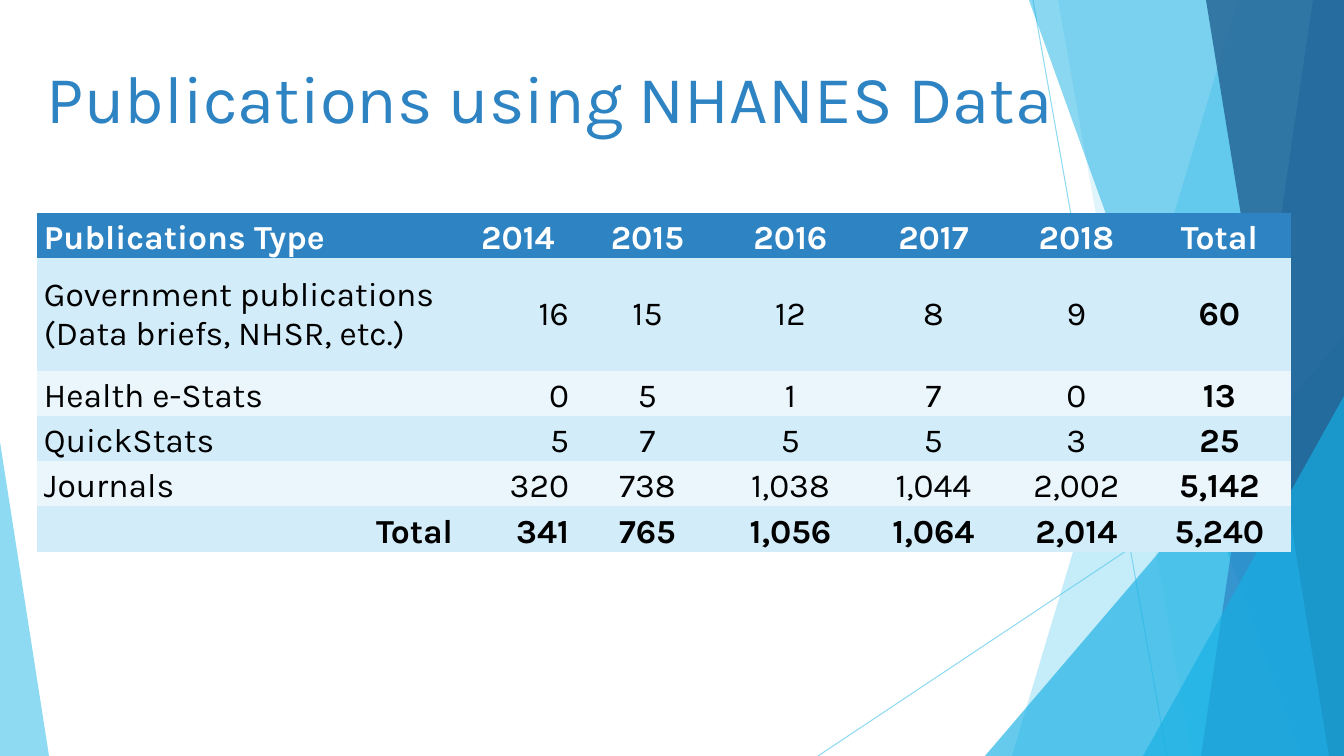
from lxml.etree import SubElement
from pptx import Presentation
from pptx.dml.color import RGBColor
from pptx.enum.shapes import MSO_CONNECTOR, MSO_SHAPE
from pptx.enum.text import MSO_ANCHOR as Anchor, PP_ALIGN as Align
from pptx.oxml.ns import qn
from pptx.util import Emu, Pt

WIDTH, HEIGHT = 1344, 756
FONT = "Karla"
SKY, CYAN, BLUE, NAVY = "5FCBEF", "17B0E4", "2E83C3", "226292"
WHITE, BLACK = "FFFFFF", "000000"
BANDS = ["D2ECF9", "EAF6FC"]
NO_GRID_STYLE = "{2D5ABB26-0587-4C30-8999-92F81FD0307C}"

COLUMN_WIDTHS = [423, 116] + [143] * 5
ROW_HEIGHTS = [45, 113, 45, 45, 45, 46]
PUBLICATIONS = [
    ["Publications Type", "2014", "2015", "2016", "2017", "2018", "Total"],
    ["Government publications (Data briefs, NHSR, etc.)", "16", "15", "12", "8", "9", "60"],
    ["Health e-Stats", "0", "5", "1", "7", "0", "13"],
    ["QuickStats", "5", "7", "5", "5", "3", "25"],
    ["Journals", "320", "738", "1,038", "1,044", "2,002", "5,142"],
    ["Total", "341", "765", "1,056", "1,064", "2,014", "5,240"],
]


def px(length):
    return Emu(round(length * 914400 / 100.8))


def color(value):
    return RGBColor.from_string(value)


def set_opacity(shape, percent):
    tone = shape._element.find(".//" + qn("a:srgbClr"))
    SubElement(tone, qn("a:alpha"), val=str(percent * 1000))


def paint(shape, fill, opacity):
    shape.shadow.inherit = False
    shape.fill.solid()
    shape.fill.fore_color.rgb = color(fill)
    shape.line.fill.background()
    set_opacity(shape, opacity)


def add_ray(page, start, end):
    ray = page.shapes.add_connector(MSO_CONNECTOR.STRAIGHT, *map(px, start + end))
    ray.line.color.rgb = color(SKY)
    ray.line.width = Pt(0.75)
    set_opacity(ray, 70)
    SubElement(ray._element.spPr, qn("a:effectLst"))


def add_panel(page, top_left, bottom_left, fill, opacity):
    builder = page.shapes.build_freeform(px(top_left), 0)
    corners = [(WIDTH, 0), (WIDTH, HEIGHT), (bottom_left, HEIGHT)]
    builder.add_line_segments([(px(x), px(y)) for x, y in corners], close=True)
    paint(builder.convert_to_shape(), fill, opacity)


def add_wedge(page, left, top, right, apex, fill, opacity):
    wedge = page.shapes.add_shape(
        MSO_SHAPE.ISOSCELES_TRIANGLE, px(left), px(top), px(right - left), px(HEIGHT - top))
    wedge.adjustments[0] = apex
    paint(wedge, fill, opacity)


def write_text(frame, text, size=24, tone=BLACK, bold=False, align=Align.LEFT):
    frame.word_wrap = True
    para = frame.paragraphs[0]
    para.alignment = align
    span = para.add_run()
    span.text = text
    span.font.name = FONT
    span.font.size = Pt(size)
    span.font.bold = bold
    span.font.color.rgb = color(tone)


def add_backdrop(page):
    add_ray(page, (1033, 0), (1167, HEIGHT))
    add_ray(page, (WIDTH, 406), (818, HEIGHT))
    add_panel(page, 1238, 1012, SKY, 36)
    add_panel(page, 1058, 1192, SKY, 20)
    add_wedge(page, 985, 336, WIDTH, 1, CYAN, 66)
    add_panel(page, 1029, 1301, CYAN, 50)
    add_panel(page, 1313, 1201, BLUE, 70)
    add_panel(page, 1206, 1329, NAVY, 80)
    add_wedge(page, 1143, 396, WIDTH, 1, CYAN, 66)
    add_wedge(page, 0, 442, 49, 0, SKY, 70)


def add_title(page, text):
    box = page.shapes.add_textbox(px(37), px(51), px(1114), px(145))
    write_text(box.text_frame, text, size=48, tone=BLUE)


def cell_align(row, column):
    last_row = len(PUBLICATIONS) - 1
    if column == 0:
        return Align.RIGHT if row == last_row else Align.LEFT
    return Align.RIGHT if column == 1 and row > 0 else Align.CENTER


def fill_cell(cell, text, row, column):
    cell.margin_left = cell.margin_right = px(7)
    cell.margin_top = cell.margin_bottom = 0
    cell.vertical_anchor = Anchor.MIDDLE if row == 1 else Anchor.BOTTOM
    cell.fill.solid()
    cell.fill.fore_color.rgb = color(BANDS[(row - 1) % 2] if row else BLUE)
    emphasis = row in (0, len(PUBLICATIONS) - 1) or column == len(COLUMN_WIDTHS) - 1
    write_text(cell.text_frame, text, tone=BLACK if row else WHITE,
               bold=emphasis, align=cell_align(row, column))


def add_publications_table(page):
    frame = page.shapes.add_table(
        len(ROW_HEIGHTS), len(COLUMN_WIDTHS), px(37), px(213),
        px(sum(COLUMN_WIDTHS)), px(sum(ROW_HEIGHTS)))
    table = frame.table
    table.first_row = table.horz_banding = False
    frame._element.find(".//" + qn("a:tableStyleId")).text = NO_GRID_STYLE
    for column, width in zip(table.columns, COLUMN_WIDTHS):
        column.width = px(width)
    for row, height in zip(table.rows, ROW_HEIGHTS):
        row.height = px(height)
    for row, values in enumerate(PUBLICATIONS):
        for column, text in enumerate(values):
            fill_cell(table.cell(row, column), text, row, column)


def main():
    deck = Presentation()
    deck.slide_width, deck.slide_height = px(WIDTH), px(HEIGHT)
    page = deck.slides.add_slide(deck.slide_layouts[6])
    add_backdrop(page)
    add_title(page, "Publications using NHANES Data")
    add_publications_table(page)
    deck.save("out.pptx")


if __name__ == "__main__":
    main()
